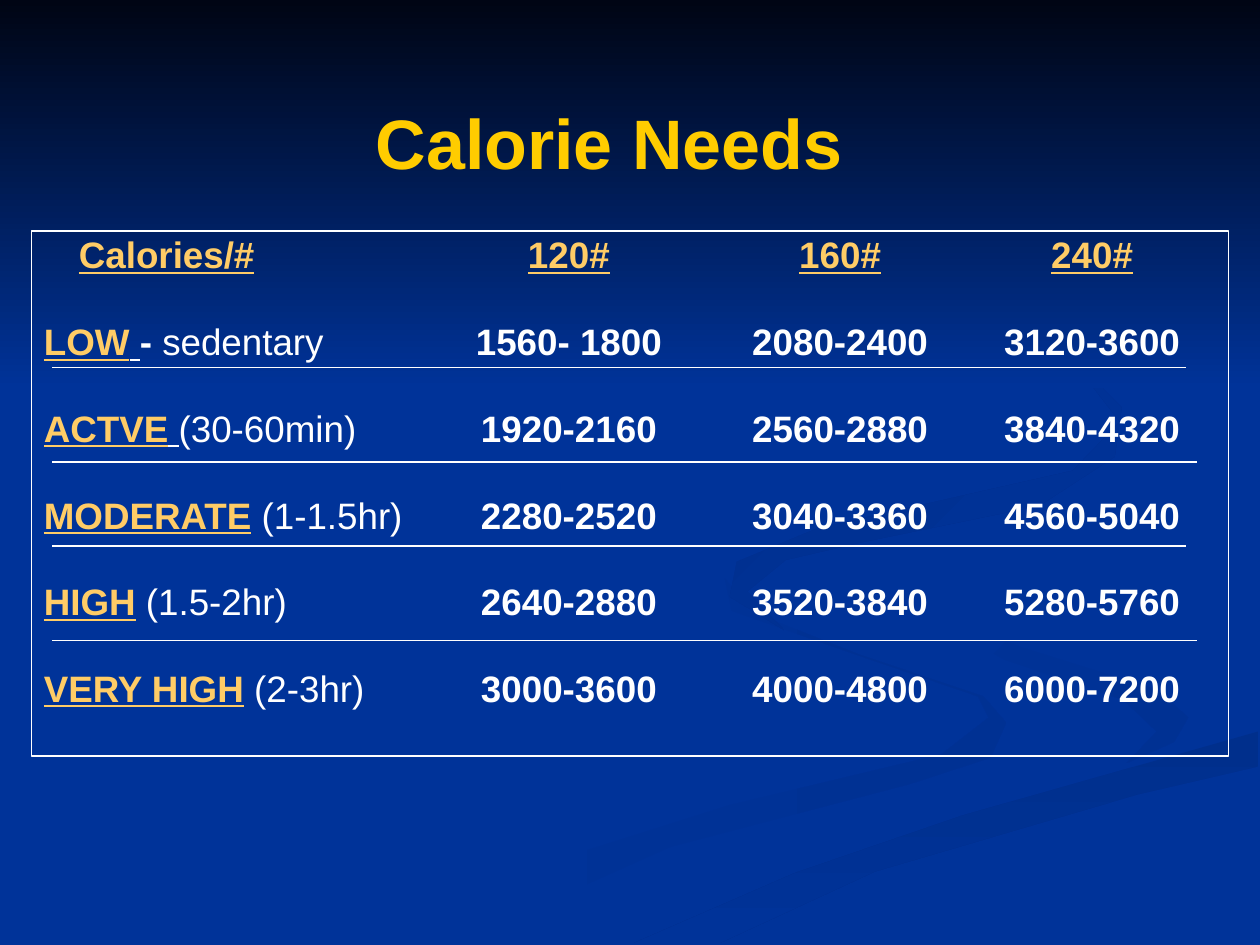
from lxml import etree
from pptx import Presentation
from pptx import util as u
from pptx.dml.color import RGBColor
from pptx.enum import shapes, text
from pptx.oxml import ns

Pt = u.Pt
HUE = {
    "blue": "003399", "night": "000514", "gold": "FFCC00",
    "sand": "FFCC66", "white": "FFFFFF",
    "dim": "003193", "deep": "002F8C", "shade": "002F8E",
}


def paint(item, first, last, angle):
    item.shadow.inherit = False
    item.line.fill.background()
    item.fill.gradient()
    item.fill.gradient_angle = angle
    for stop, name in zip(item.fill.gradient_stops, (first, last)):
        stop.color.rgb = RGBColor.from_string(HUE[name])


def write(para, size, words, hue, bold=True, under=False):
    run = para.add_run()
    run.text = words
    run.font.name, run.font.size = "Arial", Pt(size)
    run.font.bold = bold
    run.font.underline = under
    run.font.color.rgb = RGBColor.from_string(HUE[hue])


deck = Presentation()
deck.slide_width, deck.slide_height = Pt(720), Pt(540)
slide = deck.slides.add_slide(deck.slide_layouts[6])
slide.background.fill.solid()
slide.background.fill.fore_color.rgb = RGBColor.from_string(HUE["blue"])

waves = [
    ("blue", "dim", 0, [
        (562, 398), (491, 374), (428, 349), (414, 330), (418, 349),
        (489, 374), (559, 398), (565, 410), (538, 431), (417, 460),
        (300, 497), (216, 539), (260, 539), (383, 484), (520, 448),
        (566, 433), (575, 413)]),
    ("blue", "dim", 315, [
        (679, 410), (661, 394), (584, 370), (528, 348), (521, 334),
        (528, 351), (574, 377), (642, 400), (661, 418), (644, 436),
        (671, 424)]),
    ("deep", "blue", 270, [
        (362, 539), (411, 539), (500, 498), (650, 454), (719, 438),
        (719, 418), (550, 466), (454, 499)]),
    ("shade", "blue", 315, [
        (492, 310), (594, 289), (637, 261), (641, 233), (607, 198),
        (549, 168), (609, 201), (640, 241), (613, 269), (467, 302),
        (421, 321), (417, 341), (448, 360), (427, 338), (449, 320)]),
]
for first, last, angle, points in waves:
    pen = slide.shapes.build_freeform(*points[0], scale=Pt(1))
    pen.add_line_segments(points[1:])
    paint(pen.convert_to_shape(), first, last, angle)

sky = slide.shapes.add_shape(
    shapes.MSO_SHAPE.RECTANGLE, 0, 0, Pt(720), Pt(222))
paint(sky, "night", "blue", 270)

title = slide.shapes.add_textbox(Pt(42), Pt(36), Pt(612), Pt(90))
frame = title.text_frame
frame.word_wrap = True
frame.vertical_anchor = text.MSO_ANCHOR.MIDDLE
para = frame.paragraphs[0]
para.alignment = text.PP_ALIGN.CENTER
write(para, 40, "Calorie Needs", "gold")

panel = slide.shapes.add_textbox(Pt(18), Pt(132), Pt(684), Pt(300))
panel.line.color.rgb = RGBColor.from_string(HUE["white"])
panel.line.width = Pt(1)
frame = panel.text_frame
frame.word_wrap = True
frame.margin_top = Pt(5.5)

rows = [
    [("\tCalories/#\t120#\t160#\t240#", "sand", True, True)],
    [("LOW", "sand", True, True), (" ", "white", True, True),
     ("- ", "white"), ("sedentary", "white", False),
     ("\t1560- 1800\t2080-2400\t3120-3600", "white")],
    [("ACTVE", "sand", True, True), (" ", "white", True, True),
     ("(30-60min)", "white", False),
     ("\t1920-2160\t2560-2880\t3840-4320", "white")],
]
for name, note, cells in [
    ("MODERATE", " (1-1.5hr)", "\t2280-2520\t3040-3360\t4560-5040"),
    ("HIGH", " (1.5-2hr)", "\t2640-2880\t3520-3840\t5280-5760"),
    ("VERY HIGH", " (2-3hr)", "\t3000-3600\t4000-4800\t6000-7200"),
]:
    rows.append([(name, "sand", True, True), (note, "white", False),
                 (cells, "white")])

stops = [(20, "l"), (300, "ctr"), (455, "ctr"), (599, "ctr")]
for i, row in enumerate(rows):
    para = frame.add_paragraph() if i else frame.paragraphs[0]
    para.line_spacing = 0.8
    para.space_before = Pt(29.4 if i else 0)
    tabs = etree.SubElement(para._p.get_or_add_pPr(), ns.qn("a:tabLst"))
    for place, align in stops:
        etree.SubElement(tabs, ns.qn("a:tab"), pos=str(Pt(place)), algn=align)
    for part in row:
        write(para, 21, *part)

for y, right in [(210, 678), (264, 684), (312, 678), (366, 684)]:
    rule = slide.shapes.add_connector(
        shapes.MSO_CONNECTOR.STRAIGHT, Pt(30), Pt(y), Pt(right), Pt(y))
    rule.line.color.rgb = RGBColor.from_string(HUE["white"])
    rule.line.width = Pt(1)
    etree.SubElement(rule._element.spPr, ns.qn("a:effectLst"))

deck.save("out.pptx")
